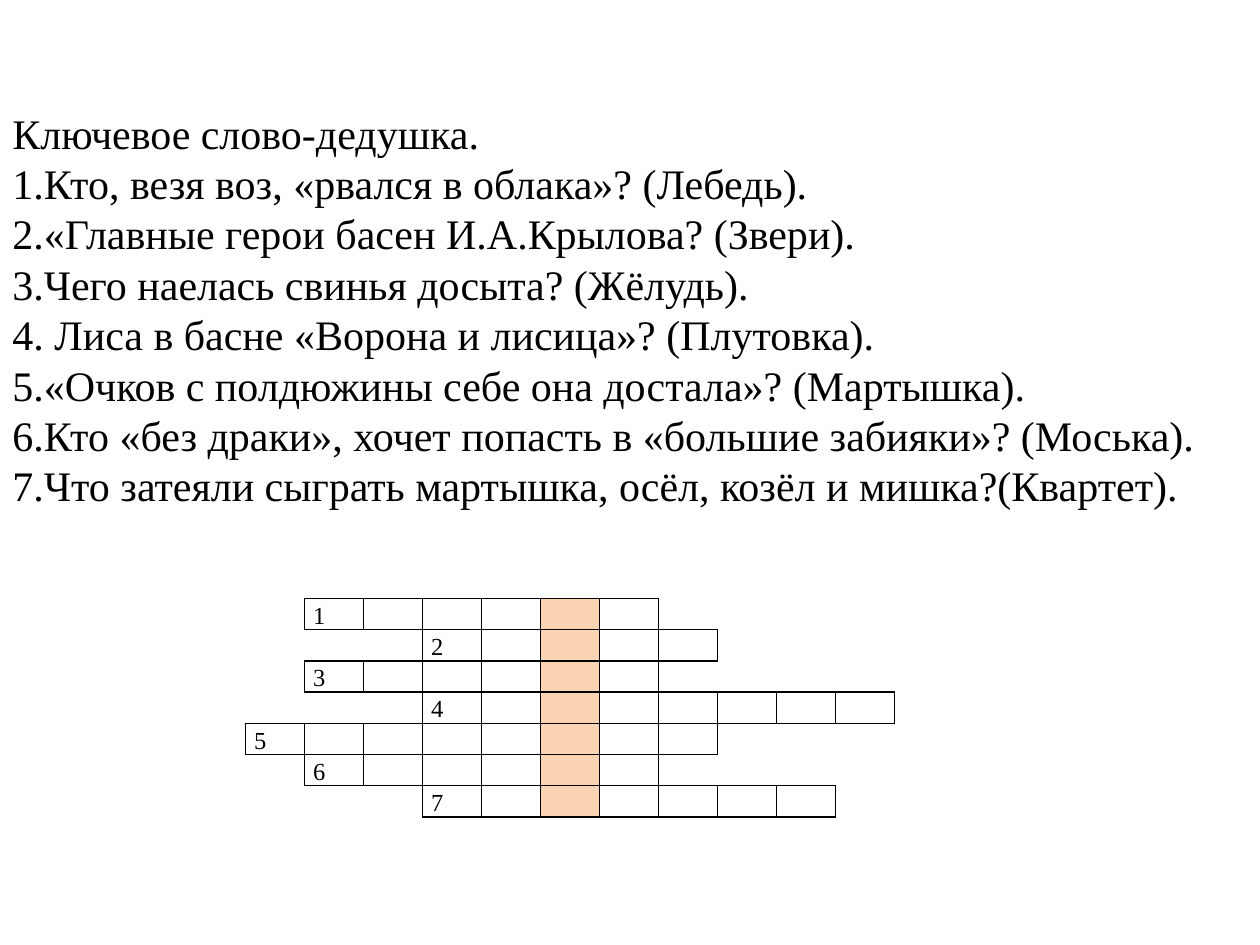
from lxml.etree import SubElement
from pptx import Presentation
from pptx.dml.color import RGBColor as RGB
from pptx.enum.text import MSO_ANCHOR as Anchor
from pptx.oxml.ns import qn
from pptx.util import Inches, Pt

THEME = {
    "font": "Times New Roman",
    "ink": RGB(0x00, 0x00, 0x00),
    "keyword": RGB(0xFB, 0xD4, 0xB4),
    "clue_size": Pt(24),
    "clue_line": Pt(28.8),
    "number_size": Pt(14),
    "number_line": Pt(17.8),
    "border": Pt(1),
}
CLUES = [
    "Ключевое слово-дедушка.",
    "1.Кто, везя воз, «рвался в облака»? (Лебедь).",
    "2.«Главные герои басен И.А.Крылова? (Звери).",
    "3.Чего наелась свинья досыта? (Жёлудь).",
    "4. Лиса в басне «Ворона и лисица»? (Плутовка).",
    "5.«Очков с полдюжины себе она достала»? (Мартышка).",
    "6.Кто «без драки», хочет попасть в «большие забияки»? (Моська).",
    "7.Что затеяли сыграть мартышка, осёл, козёл и мишка?(Квартет).",
]
WORDS = [(2, 6), (4, 5), (2, 6), (4, 8), (1, 8), (2, 6), (4, 7)]
ROWS, COLUMNS, KEY_COLUMN = len(WORDS) + 2, 13, 6
SIDES = {"a:lnL": (0, -1), "a:lnR": (0, 1), "a:lnT": (-1, 0), "a:lnB": (1, 0)}


def add_text(paragraph, text, size, line):
    paragraph.line_spacing = line
    run = paragraph.add_run()
    run.text = text
    run.font.name = THEME["font"]
    run.font.size = size
    run.font.color.rgb = THEME["ink"]


def add_border(cell, side, visible):
    border = SubElement(cell._tc.get_or_add_tcPr(), qn(side), w=str(THEME["border"]))
    if visible:
        fill = SubElement(border, qn("a:solidFill"))
        SubElement(fill, qn("a:srgbClr"), val=str(THEME["ink"]))
    else:
        SubElement(border, qn("a:noFill"))


presentation = Presentation()
presentation.slide_width, presentation.slide_height = Inches(10), Inches(7.5)
slide = presentation.slides.add_slide(presentation.slide_layouts[6])

table = slide.shapes.add_table(
    ROWS, COLUMNS, Inches(1.48), Inches(4.53), Inches(6.09), Inches(2.42)
).table
table.first_row = table.horz_banding = False
for column in table.columns:
    column.width = Inches(6.09 / COLUMNS)
for row in table.rows:
    row.height = THEME["number_line"]
table.rows[0].height = Inches(0.22)
table.rows[ROWS - 1].height = Inches(0.47)

letters = {
    (row, column)
    for row, (start, length) in enumerate(WORDS, 1)
    for column in range(start, start + length)
}
for row in range(ROWS):
    for column in range(COLUMNS):
        cell = table.cell(row, column)
        cell.margin_left = cell.margin_right = Inches(0.07)
        cell.margin_top = cell.margin_bottom = 0
        for side, (down, right) in SIDES.items():
            neighbours = {(row, column), (row + down, column + right)}
            add_border(cell, side, bool(neighbours & letters))
        if (row, column) in letters and column == KEY_COLUMN:
            cell.fill.solid()
            cell.fill.fore_color.rgb = THEME["keyword"]
        else:
            cell.fill.background()
        paragraph = cell.text_frame.paragraphs[0]
        if (row, column) in letters and column == WORDS[row - 1][0]:
            add_text(paragraph, str(row), THEME["number_size"], THEME["number_line"])
        else:
            SubElement(paragraph._p, qn("a:endParaRPr"), sz="1000")

clues = slide.shapes.add_textbox(0, Inches(0.55), presentation.slide_width, Inches(3.57))
frame = clues.text_frame
frame.word_wrap = True
frame.vertical_anchor = Anchor.MIDDLE
frame.margin_top = Inches(0.28)
for index, clue in enumerate(CLUES):
    paragraph = frame.add_paragraph() if index else frame.paragraphs[0]
    add_text(paragraph, clue, THEME["clue_size"], THEME["clue_line"])

presentation.save("out.pptx")
